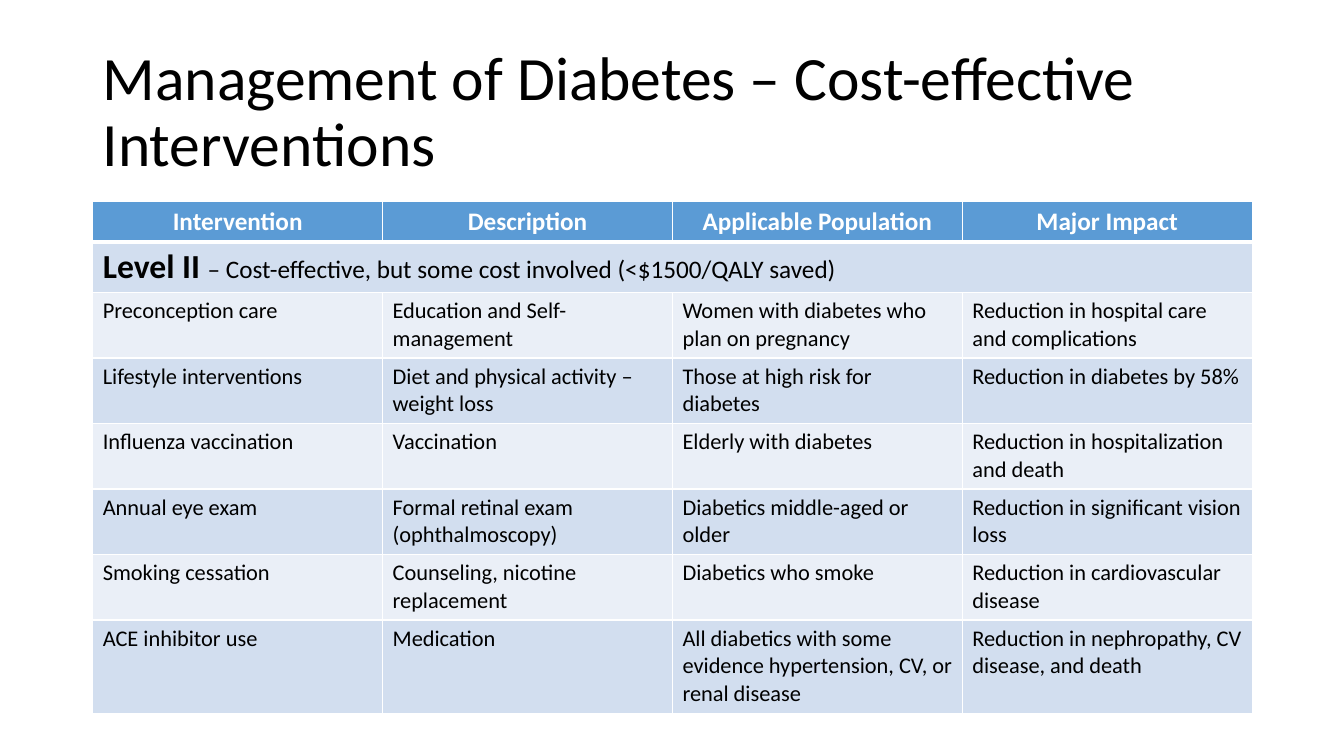
import pptx
import pptx.dml.color
import pptx.enum.text
import pptx.oxml
import pptx.oxml.ns
import pptx.util

THEME = {
    "font": "Calibri",
    "ink": "000000", "paper": "FFFFFF",
    "header": "5B9BD5", "bands": ("EAEFF7", "D2DEEF"),
    "title": 44, "level": 24, "heading": 18, "body": 16,
    "rule": 1, "header rule": 3,
}
HEADINGS = ["Intervention", "Description", "Applicable Population", "Major Impact"]
LEVEL = ["Level II ", "– Cost-effective, but some cost involved (<$1500/QALY saved)"]
INTERVENTIONS = [
    ["Preconception care", "Education and Self-management",
     "Women with diabetes who plan on pregnancy",
     "Reduction in hospital care and complications"],
    ["Lifestyle interventions", "Diet and physical activity – weight loss",
     "Those at high risk for diabetes", "Reduction in diabetes by 58%"],
    ["Influenza vaccination", "Vaccination", "Elderly with diabetes",
     "Reduction in hospitalization and death"],
    ["Annual eye exam", "Formal retinal exam (ophthalmoscopy)",
     "Diabetics middle-aged or older", "Reduction in significant vision loss"],
    ["Smoking cessation", "Counseling, nicotine replacement",
     "Diabetics who smoke", "Reduction in cardiovascular disease"],
    ["ACE inhibitor use", "Medication",
     "All diabetics with some evidence hypertension, CV, or renal disease",
     "Reduction in nephropathy, CV disease, and death"],
]
ROW_HEIGHTS = [0.39, 0.49] + [0.65] * 5 + [0.93]


def style(span, size, color=THEME["ink"], bold=False):
    span.font.name = THEME["font"]
    span.font.size = pptx.util.Pt(size)
    span.font.bold = bold
    span.font.color.rgb = pptx.dml.color.RGBColor.from_string(color)


def paint(cell, fill, top, bottom):
    """Fill a cell and rule its four sides; top and bottom are widths in points."""
    cell.fill.solid()
    cell.fill.fore_color.rgb = pptx.dml.color.RGBColor.from_string(fill)
    sides = {"L": THEME["rule"], "R": THEME["rule"], "T": top, "B": bottom}
    for place, (side, width) in enumerate(sides.items()):
        line = pptx.oxml.parse_xml(
            f'<a:ln{side} {pptx.oxml.ns.nsdecls("a")} w="{pptx.util.Pt(width)}">'
            f'<a:solidFill><a:srgbClr val="{THEME["paper"]}"/></a:solidFill></a:ln{side}>')
        cell._tc.get_or_add_tcPr().insert(place, line)


deck = pptx.Presentation()
deck.slide_width = pptx.util.Inches(13.33)
deck.slide_height = pptx.util.Inches(7.5)
page = deck.slides.add_slide(deck.slide_layouts[6])
left = pptx.util.Inches(0.92)
width = pptx.util.Inches(11.5)

# Title
box = page.shapes.add_textbox(left, pptx.util.Inches(0.4), width, pptx.util.Inches(1.45))
box.text_frame.word_wrap = True
box.text_frame.vertical_anchor = pptx.enum.text.MSO_ANCHOR.MIDDLE
box.text_frame.text = "Management of Diabetes – Cost-effective Interventions"
para = box.text_frame.paragraphs[0]
para.line_spacing = 0.9
style(para.runs[0], THEME["title"])

# Table grid
table = page.shapes.add_table(
    len(ROW_HEIGHTS), len(HEADINGS), left, pptx.util.Inches(2),
    width, pptx.util.Inches(sum(ROW_HEIGHTS))).table
for row, height in zip(table.rows, ROW_HEIGHTS):
    row.height = pptx.util.Inches(height)
for index, row in enumerate(table.rows):
    fill = THEME["bands"][index % 2] if index else THEME["header"]
    top = THEME["header rule"] if index == 1 else THEME["rule"]
    bottom = THEME["header rule"] if index == 0 else THEME["rule"]
    for cell in row.cells:
        paint(cell, fill, top, bottom)

# Header row
for cell, heading in zip(table.rows[0].cells, HEADINGS):
    cell.text_frame.text = heading
    cell.vertical_anchor = pptx.enum.text.MSO_ANCHOR.MIDDLE
    para = cell.text_frame.paragraphs[0]
    para.alignment = pptx.enum.text.PP_ALIGN.CENTER
    style(para.runs[0], THEME["heading"], THEME["paper"], bold=True)

# Level row, across all columns
level_cell = table.cell(1, 0)
level_cell.merge(table.cell(1, len(HEADINGS) - 1))
para = level_cell.text_frame.paragraphs[0]
for words, size, bold in zip(LEVEL, (THEME["level"], THEME["heading"]), (True, False)):
    span = para.add_run()
    span.text = words
    style(span, size, bold=bold)

# Interventions
for index, entries in enumerate(INTERVENTIONS, start=2):
    for cell, words in zip(table.rows[index].cells, entries):
        cell.text_frame.text = words
        style(cell.text_frame.paragraphs[0].runs[0], THEME["body"])

deck.save("out.pptx")
